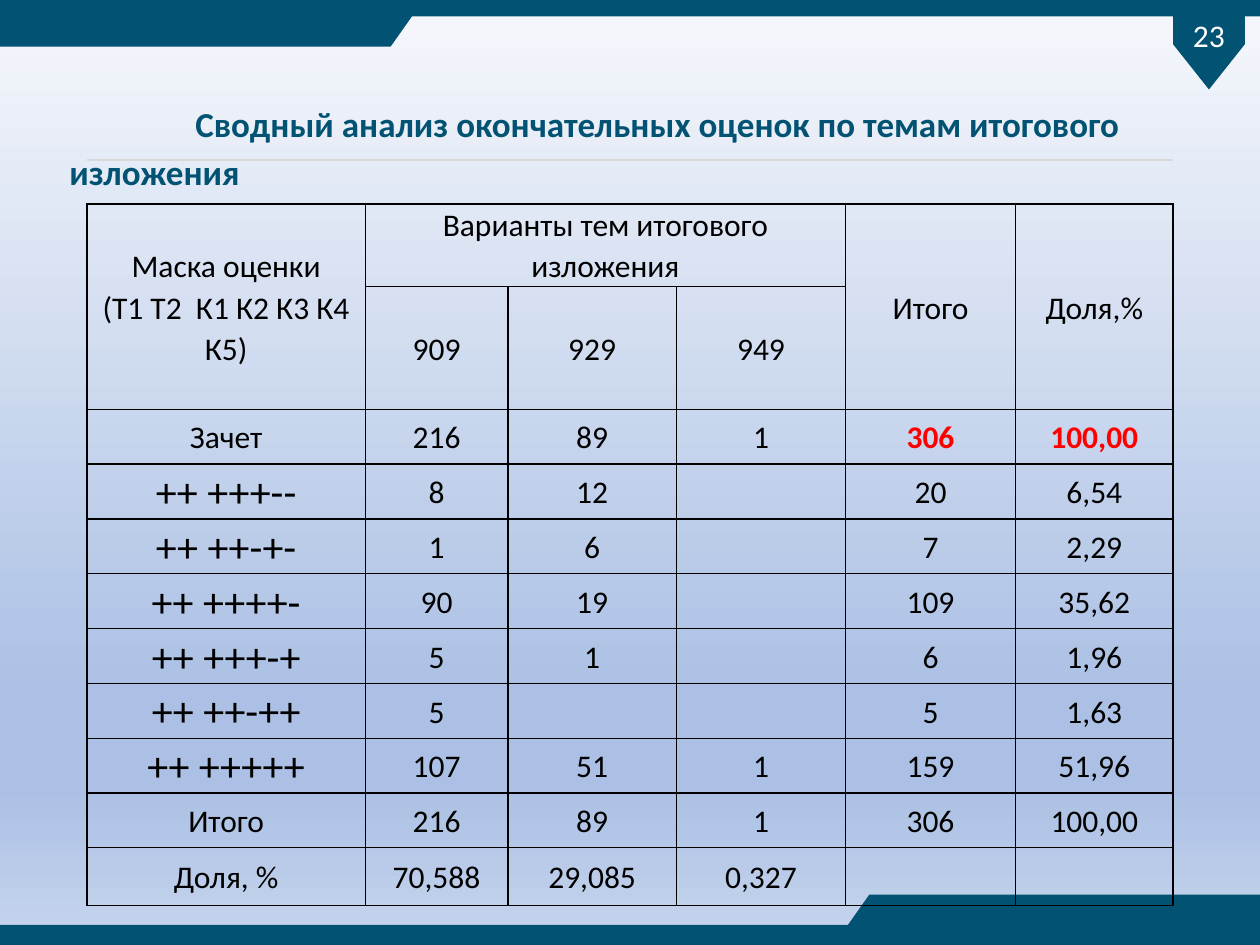
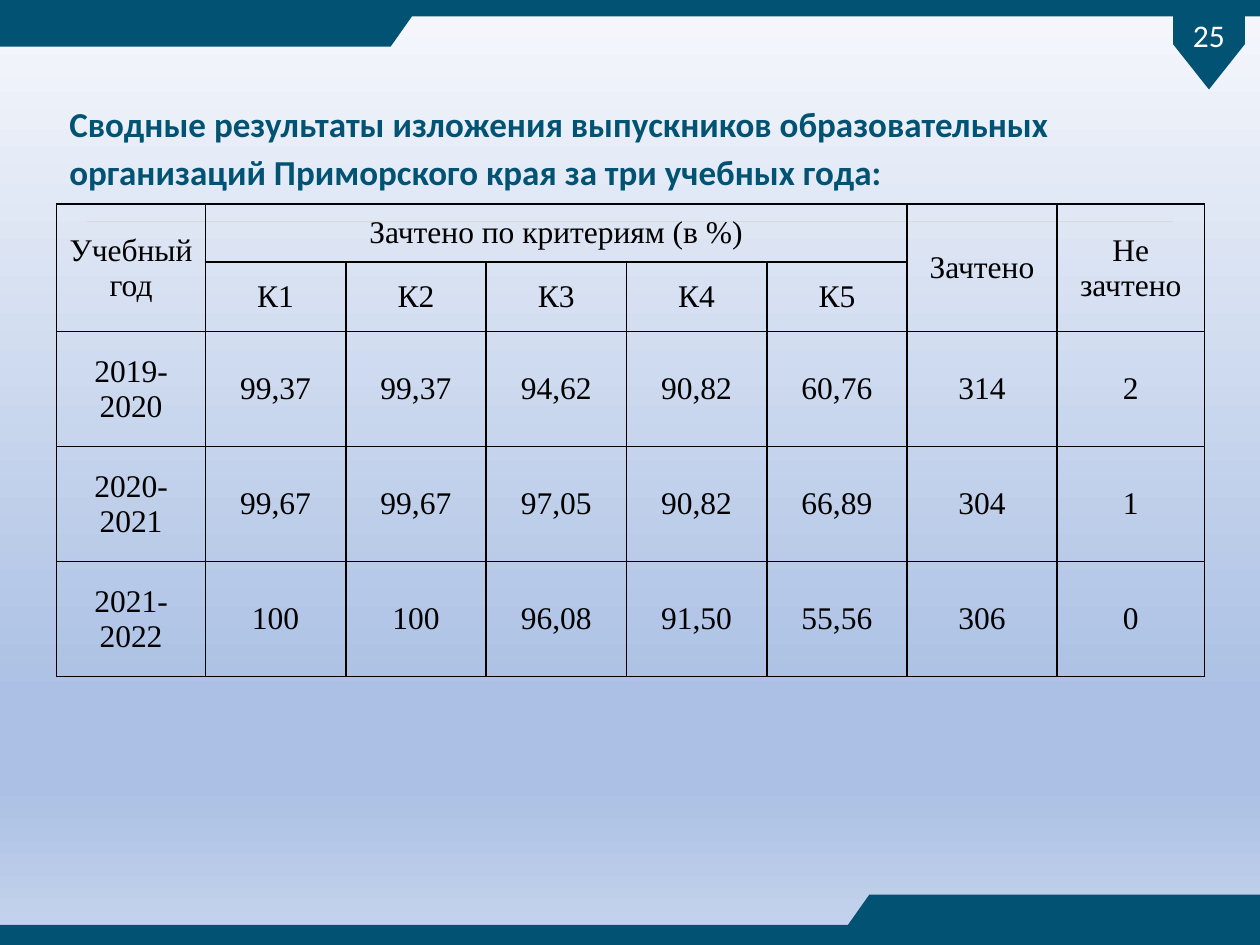
"""Build two slides with summary tables of exposition results."""
from lxml import etree
from pptx import Presentation
from pptx import util as u
from pptx.dml.color import RGBColor
from pptx.enum import shapes, text
from pptx.oxml.ns import qn

Pt = u.Pt
COLORS = {"teal": "025373", "rule": "D9D9D9", "black": "000000",
          "white": "FFFFFF", "red": "FF0000"}
BACKDROP = [(0, "F6F8FC"), (74, "ABC0E4"), (83, "ABC0E4"), (100, "C7D5ED")]
BAND = [(496.8, 0), (720, 0), (720, 28.8), (0, 28.8), (0, 17.3), (484.6, 17.3)]
NO_MARGINS = dict.fromkeys(
    ("margin_left", "margin_top", "margin_right", "margin_bottom"), Pt(0.72))
CELL = {"margin_left": Pt(5), "margin_right": Pt(5), "margin_top": 0,
        "margin_bottom": 0, "vertical_anchor": text.MSO_ANCHOR.MIDDLE}


def rgb(name):
    return RGBColor.from_string(COLORS[name])


def apply(obj, values):
    for name, value in values.items():
        setattr(obj, name, value)


class Deck:
    def __init__(self):
        self.prs = Presentation()
        apply(self.prs, {"slide_width": Pt(720), "slide_height": Pt(540)})
        self.s = None
        self.backdrop()

    def backdrop(self):
        master = self.prs.slide_master
        fill = master.background.fill
        fill.gradient()
        fill.gradient_angle = 270
        stops = master.element.find(".//" + qn("a:gsLst"))
        for old in list(stops):
            stops.remove(old)
        for pos, color in BACKDROP:
            gs = etree.SubElement(stops, qn("a:gs"), pos=str(pos * 1000))
            etree.SubElement(gs, qn("a:srgbClr"), val=color)

    def slide(self, number, title, rule_y, indent=0):
        self.s = self.prs.slides.add_slide(self.prs.slide_layouts[5])
        self.title(title, indent)
        self.band(511.2)
        self.band(-2.16, 180)
        self.page_marker(number)
        self.rule(rule_y)

    def paragraphs(self, tf, values, font, color):
        for p in tf.paragraphs:
            apply(p, values)
            for r in p.runs:
                apply(r.font, font)
                r.font.color.rgb = rgb(color)

    def title(self, words, indent):
        sp = self.s.shapes.title
        apply(sp, {"left": Pt(32.4), "top": Pt(51.5),
                   "width": Pt(679), "height": Pt(63)})
        tf = sp.text_frame
        tf.text = words
        apply(tf, {"word_wrap": True, "auto_size": text.MSO_AUTO_SIZE.NONE,
                   "vertical_anchor": text.MSO_ANCHOR.TOP})
        self.paragraphs(tf, {"alignment": text.PP_ALIGN.LEFT, "line_spacing": 1.14,
                             "space_before": Pt(0)},
                        {"name": "Calibri", "size": Pt(20), "bold": True}, "teal")
        tf.paragraphs[0]._p.get_or_add_pPr().set("indent", str(Pt(indent)))

    def paint(self, sp):
        sp.shadow.inherit = False
        sp.fill.solid()
        sp.fill.fore_color.rgb = rgb("teal")
        sp.line.fill.background()

    def band(self, top, rotation=0):
        points = [(Pt(x), Pt(top + y)) for x, y in BAND]
        builder = self.s.shapes.build_freeform(*points[0])
        builder.add_line_segments(points[1:])
        sp = builder.convert_to_shape()
        sp.rotation = rotation
        self.paint(sp)

    def page_marker(self, number):
        sp = self.s.shapes.add_shape(shapes.MSO_SHAPE.PENTAGON,
                                     Pt(666), Pt(5.76), Pt(49.68), Pt(41.04))
        sp.rotation = 90
        sp.adjustments[0] = 0.63
        self.paint(sp)
        tf = sp.text_frame
        tf.text = str(number)
        apply(tf, {**NO_MARGINS, "vertical_anchor": text.MSO_ANCHOR.MIDDLE})
        tf._txBody.bodyPr.set("vert", "vert270")
        self.paragraphs(tf, {"alignment": text.PP_ALIGN.CENTER},
                        {"name": "Calibri", "size": Pt(18)}, "white")

    def rule(self, y):
        cx = self.s.shapes.add_connector(shapes.MSO_CONNECTOR.STRAIGHT,
                                         Pt(49.7), Pt(y), Pt(670.3), Pt(y))
        cx.line.width = Pt(0.75)
        cx.line.color.rgb = rgb("rule")
        etree.SubElement(cx._element.spPr, qn("a:effectLst"))

    def borders(self, cell):
        tcPr = cell._tc.get_or_add_tcPr()
        for side in "LRTB":
            ln = etree.SubElement(tcPr, qn("a:ln" + side), w=str(Pt(1)))
            fill = etree.SubElement(ln, qn("a:solidFill"))
            etree.SubElement(fill, qn("a:srgbClr"), val=COLORS["black"])

    def table(self, left, widths, heights, rows, spans, font, spacing, accents=()):
        frame = self.s.shapes.add_table(len(rows), len(widths), Pt(left), Pt(116.6),
                                        Pt(sum(widths)), Pt(sum(heights)))
        tbl = frame.table
        apply(tbl, {"first_row": False, "horz_banding": False})
        for col, width in zip(tbl.columns, widths):
            col.width = Pt(width)
        for row, height in zip(tbl.rows, heights):
            row.height = Pt(height)
        for i, row in enumerate(rows):
            for j, words in enumerate(row):
                cell = tbl.cell(i, j)
                apply(cell, CELL)
                self.borders(cell)
                cell.fill.background()
                if not words:
                    continue
                cell.text = words
                accent = (i, j) in accents
                size = 24 if words.startswith("++") else 18
                self.paragraphs(cell.text_frame,
                                {"alignment": text.PP_ALIGN.CENTER,
                                 "line_spacing": spacing},
                                {"name": font, "size": Pt(size), "bold": accent},
                                "red" if accent else "black")
        for top, left_col, bottom, right_col in spans:
            tbl.cell(top, left_col).merge(tbl.cell(bottom, right_col))


def main():
    deck = Deck()

    deck.slide(23, "Сводный анализ окончательных оценок по темам итогового изложения",
               91.4, indent=72)
    masks = [
        ["Маска оценки\n(Т1 Т2  К1 К2 К3 К4 К5)", "Варианты тем итогового изложения",
         "", "", "Итого", "Доля,%"],
        ["", "909", "929", "949", "", ""],
        ["Зачет", "216", "89", "1", "306", "100,00"],
        ["++ +++--", "8", "12", "", "20", "6,54"],
        ["++ ++-+-", "1", "6", "", "7", "2,29"],
        ["++ ++++-", "90", "19", "", "109", "35,62"],
        ["++ +++-+", "5", "1", "", "6", "1,96"],
        ["++ ++-++", "5", "", "", "5", "1,63"],
        ["++ +++++", "107", "51", "1", "159", "51,96"],
        ["Итого", "216", "89", "1", "306", "100,00"],
        ["Доля, %", "70,588", "29,085", "0,327", "", ""],
    ]
    deck.table(49.7, [159.1, 81.4, 96.5, 96.5, 97.2, 90], [31, 43.9] + [31] * 8 + [33.1],
               masks, [(0, 0, 1, 0), (0, 1, 0, 3), (0, 4, 1, 4), (0, 5, 1, 5)],
               "Calibri", 1.07, accents=[(2, 4), (2, 5)])

    deck.slide(25, "Сводные результаты изложения выпускников образовательных "
                   "организаций Приморского края за три учебных года:", 126.7)
    years = [
        ["Учебный год", "Зачтено по критериям (в %)", "", "", "", "",
         "Зачтено", "Не зачтено"],
        ["", "К1", "К2", "К3", "К4", "К5", "", ""],
        ["2019-2020", "99,37", "99,37", "94,62", "90,82", "60,76", "314", "2"],
        ["2020-2021", "99,67", "99,67", "97,05", "90,82", "66,89", "304", "1"],
        ["2021-2022", "100", "100", "96,08", "91,50", "55,56", "306", "0"],
    ]
    deck.table(32.4, [85] + [80.2] * 5 + [85.7, 84.2], [33.1] * 2 + [65.7] * 3,
               years, [(0, 0, 1, 0), (0, 1, 0, 5), (0, 6, 1, 6), (0, 7, 1, 7)],
               "Times New Roman", 1.0)

    deck.prs.save("out.pptx")


if __name__ == "__main__":
    main()
